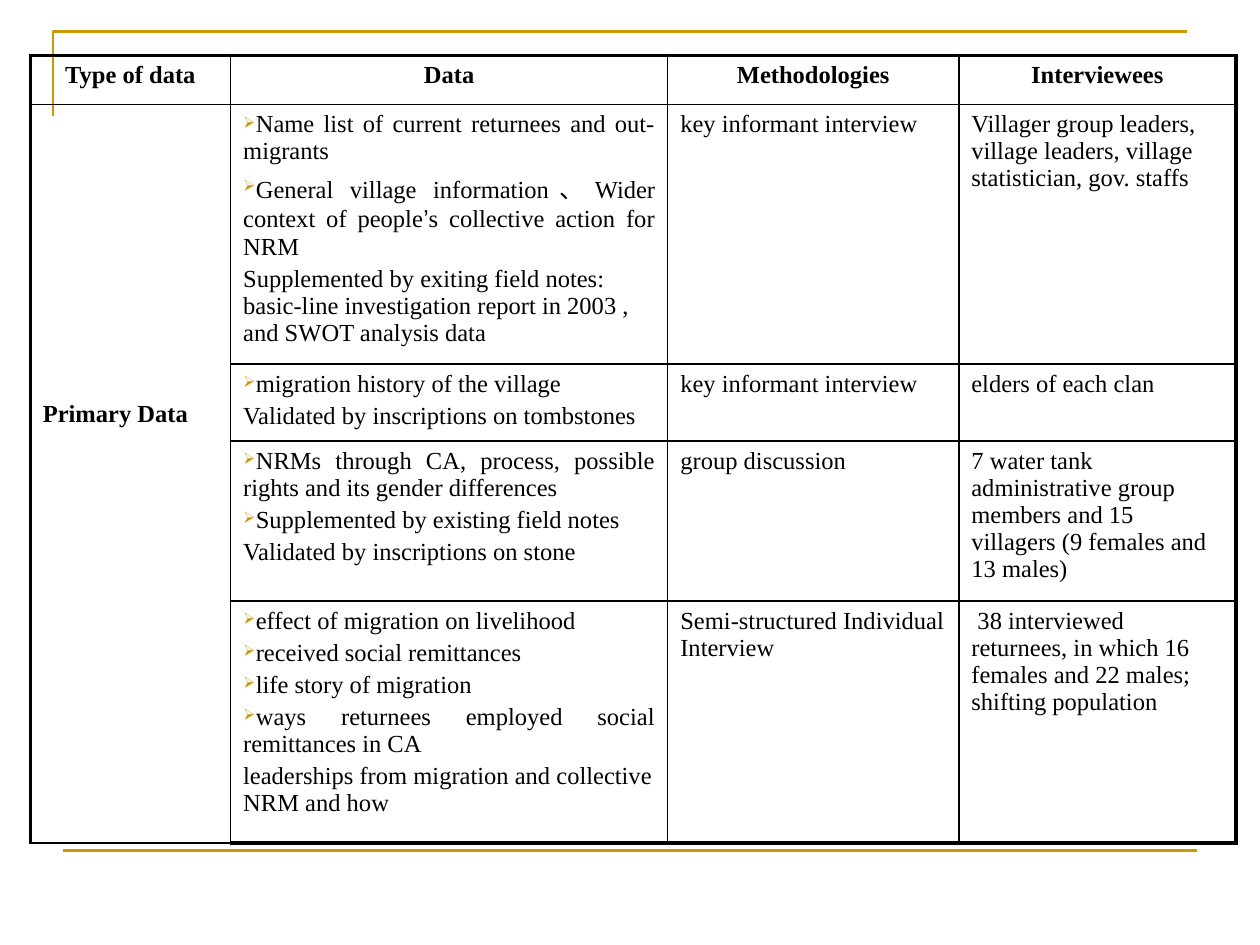
from dataclasses import dataclass

from lxml.etree import SubElement
from pptx import Presentation
from pptx.dml.color import RGBColor
from pptx.enum.shapes import MSO_CONNECTOR
from pptx.enum.text import MSO_ANCHOR, PP_ALIGN
from pptx.oxml.ns import qn
from pptx.util import Inches, Pt

COLORS = {"ink": "000000", "gold": "CC9900"}
FONT, SIZE = "Times New Roman", 14
APOSTROPHE, APOSTROPHE_FONT = "’", "Arial"
THIN, THICK = 1, 2.25
COLS = [1.59, 3.47, 2.31, 2.2]
ROWS = [0.39, 2.06, 0.61, 1.27, 1.92]
TABLE_LEFT, TABLE_TOP = 0.24, 0.44


@dataclass
class Para:
    text: str
    align: PP_ALIGN = PP_ALIGN.LEFT
    bold: bool = False
    bullet: bool = False


@dataclass
class Topic:
    bullets: list[str]
    remark: str
    method: str
    interviewees: str

    def cells(self) -> list[list[Para]]:
        data = [Para(t, PP_ALIGN.JUSTIFY, bullet=True) for t in self.bullets]
        return [data + [Para(self.remark)], [Para(self.method)], [Para(self.interviewees)]]


HEADINGS = ["Type of data", "Data", "Methodologies", "Interviewees"]
TOPICS = [
    Topic(["Name list of current returnees and out-migrants",
           "General village information、Wider context of people’s collective action for NRM"],
          "Supplemented by exiting field notes: basic-line investigation report in 2003 , "
          "and SWOT analysis data",
          "key informant interview",
          "Villager group leaders, village leaders, village statistician, gov. staffs"),
    Topic(["migration history of the village"],
          "Validated by inscriptions on tombstones",
          "key informant interview", "elders of each clan"),
    Topic(["NRMs through CA, process, possible rights and its gender differences",
           "Supplemented by existing field notes"],
          "Validated by inscriptions on stone",
          "group discussion",
          "7 water tank administrative group members and 15 villagers "
          "(9 females and 13 males)"),
    Topic(["effect of migration on livelihood", "received social remittances",
           "life story of migration", "ways returnees employed social remittances in CA"],
          "leaderships from migration and collective NRM and how",
          "Semi-structured Individual Interview",
          " 38 interviewed returnees, in which 16 females and 22 males; shifting population"),
]


def rgb(name: str) -> RGBColor:
    return RGBColor.from_string(COLORS[name])


def style_line(line) -> None:
    line.color.rgb = rgb("gold")
    line.width = Pt(1.5)


def add_frame(slide) -> None:
    """Draw the gold corner at the top and the gold rule at the bottom."""
    left, top, right, bottom = [Inches(v) for v in (0.42, 0.25, 9.42, 0.92)]
    builder = slide.shapes.build_freeform(left, bottom)
    builder.add_line_segments([(left, top), (right, top)], close=False)
    corner = builder.convert_to_shape()
    corner.fill.background()
    corner.shadow.inherit = False
    style_line(corner.line)

    y = Inches(6.75)
    rule = slide.shapes.add_connector(MSO_CONNECTOR.STRAIGHT, Inches(0.5), y, Inches(9.5), y)
    style_line(rule.line)
    SubElement(rule._element.spPr, qn("a:effectLst"))


def add_bullet(p) -> None:
    pPr = p._p.get_or_add_pPr()
    pPr.set("marL", "0")
    pPr.set("indent", "0")
    color = SubElement(pPr, qn("a:buClr"))
    SubElement(color, qn("a:srgbClr"), val=COLORS["gold"])
    SubElement(pPr, qn("a:buSzPct"), val="65000")
    SubElement(pPr, qn("a:buChar"), char="➢")


def add_run(p, text: str, font: str, bold: bool) -> None:
    r = p.add_run()
    r.text = text
    r.font.name, r.font.size, r.font.bold = font, Pt(SIZE), bold
    r.font.color.rgb = rgb("ink")


def write_cell(cell, paras: list[Para]) -> None:
    tf = cell.text_frame
    for i, para in enumerate(paras):
        p = tf.add_paragraph() if i else tf.paragraphs[0]
        p.alignment = para.align
        p.space_before = Pt(0.2 * SIZE)
        if para.bullet:
            add_bullet(p)
        before, mark, after = para.text.partition(APOSTROPHE)
        for text, font in ((before, FONT), (mark, APOSTROPHE_FONT), (after, FONT)):
            if text:
                add_run(p, text, font, para.bold)


def style_cell(cell, row: int, col: int) -> None:
    """Thin inner borders, thick outer borders, no fill."""
    outer = {"L": col == 0, "R": col == len(COLS) - 1,
             "T": row == 0, "B": row == len(ROWS) - 1}
    tcPr = cell._tc.get_or_add_tcPr()
    for side, is_outer in outer.items():
        width = Pt(THICK if is_outer else THIN)
        ln = SubElement(tcPr, qn(f"a:ln{side}"), w=str(int(width)))
        fill = SubElement(ln, qn("a:solidFill"))
        SubElement(fill, qn("a:srgbClr"), val=COLORS["ink"])
    cell.fill.background()
    cell.margin_left = cell.margin_right = Inches(0.1)
    cell.margin_top = cell.margin_bottom = Inches(0.05)


def add_data_table(slide) -> None:
    frame = slide.shapes.add_table(len(ROWS), len(COLS), Inches(TABLE_LEFT), Inches(TABLE_TOP),
                                   Inches(sum(COLS)), Inches(sum(ROWS)))
    table = frame.table
    table.first_row = table.horz_banding = False
    for column, width in zip(table.columns, COLS):
        column.width = Inches(width)
    for row, height in zip(table.rows, ROWS):
        row.height = Inches(height)
    for row in range(len(ROWS)):
        for col in range(len(COLS)):
            style_cell(table.cell(row, col), row, col)

    for col, heading in enumerate(HEADINGS):
        write_cell(table.cell(0, col), [Para(heading, PP_ALIGN.CENTER, bold=True)])
    for row, topic in enumerate(TOPICS, start=1):
        for col, paras in enumerate(topic.cells(), start=1):
            write_cell(table.cell(row, col), paras)

    group = table.cell(1, 0)
    group.merge(table.cell(len(ROWS) - 1, 0))
    group.vertical_anchor = MSO_ANCHOR.MIDDLE
    group.margin_bottom = Inches(1)  # lifts the label above the middle
    write_cell(group, [Para("Primary Data", bold=True)])


def main() -> None:
    prs = Presentation()
    prs.slide_width, prs.slide_height = Inches(10), Inches(7.5)
    slide = prs.slides.add_slide(prs.slide_layouts[6])
    add_frame(slide)
    add_data_table(slide)
    prs.save("out.pptx")


if __name__ == "__main__":
    main()
